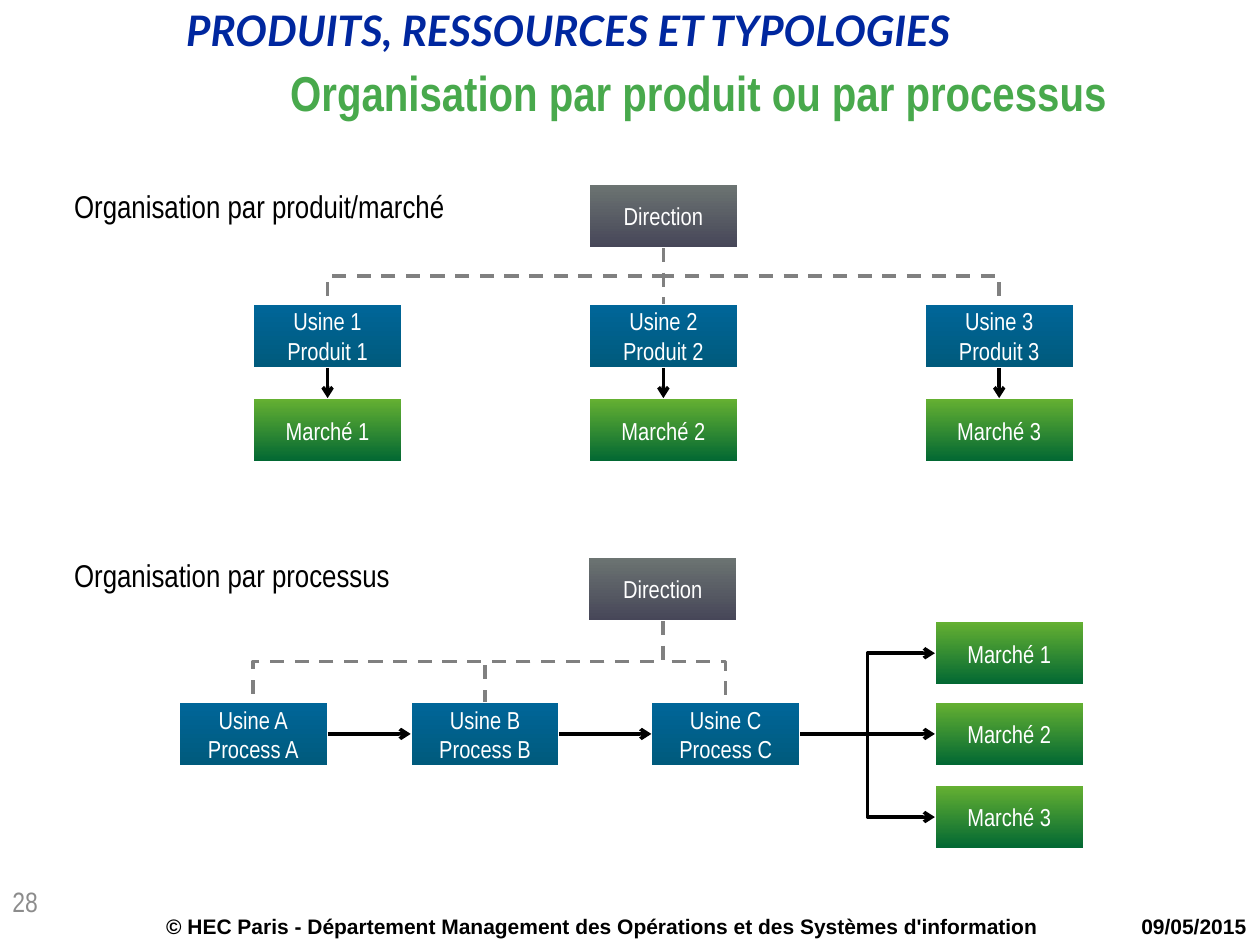
from lxml.etree import SubElement
from pptx import Presentation
from pptx.dml.color import RGBColor
from pptx.enum.dml import MSO_LINE
from pptx.enum.shapes import MSO_CONNECTOR, MSO_SHAPE
from pptx.enum.text import MSO_ANCHOR, MSO_AUTO_SIZE, PP_ALIGN
from pptx.oxml.ns import qn
from pptx.util import Inches, Pt

COLORS = {
    "navy": "00279F", "title": "48A94C", "black": "000000", "white": "FFFFFF",
    "dash": "808080", "number": "8C8C8C",
}
GRADIENTS = {
    "head": ("6C7472", "464658"),
    "plant": ("006699", "005A7C"),
    "market": ("66B132", "006633"),
}
COLS, ROWS = 100, 75
NODE_W, NODE_H = 11.8, 5.1

prs = Presentation()
prs.slide_width, prs.slide_height = Inches(10), Inches(7.5)


def rgb(name):
    return RGBColor.from_string(COLORS[name])


def grid(*values):
    unit = prs.slide_width / COLS
    return [round(v * unit) for v in values]


def format_text(tf, text, size, color, font="Arial Narrow", bold=False,
                italic=False, align=None, spacing=None):
    tf.text = text
    for p in tf.paragraphs:
        p.alignment = align
        p.line_spacing = spacing
        for r in p.runs:
            r.font.name, r.font.size = font, Pt(size)
            r.font.bold, r.font.italic = bold, italic
            r.font.color.rgb = rgb(color)


def add_text(s, box, text, size, color, wrap=False, **style):
    tf = s.shapes.add_textbox(*grid(*box)).text_frame
    tf.word_wrap = wrap
    format_text(tf, text, size, color, **style)


def add_node(s, x, y, text, kind):
    sp = s.shapes.add_shape(MSO_SHAPE.RECTANGLE, *grid(x, y, NODE_W, NODE_H))
    sp.shadow.inherit = False
    sp.fill.gradient()
    sp.fill.gradient_angle = 270
    for stop, color in zip(sp.fill.gradient_stops, GRADIENTS[kind]):
        stop.color.rgb = RGBColor.from_string(color)
    sp.line.color.rgb, sp.line.width = rgb("white"), Pt(1)
    tf = sp.text_frame
    tf.margin_left = tf.margin_right = tf.margin_top = tf.margin_bottom = 0
    tf.vertical_anchor = MSO_ANCHOR.MIDDLE
    tf.word_wrap = kind != "market"
    format_text(tf, text, 14, "white", align=PP_ALIGN.CENTER)
    return sp


def add_link(s, start, end, color):
    straight = start[0] == end[0] or start[1] == end[1]
    kind = MSO_CONNECTOR.STRAIGHT if straight else MSO_CONNECTOR.ELBOW
    c = s.shapes.add_connector(kind, *start, *end)
    c.line.color.rgb, c.line.width = rgb(color), Pt(2)
    SubElement(c.element.spPr, qn("a:effectLst"))
    return c


def add_arrow(s, start, end):
    c = add_link(s, start, end, "black")
    SubElement(c.line._get_or_add_ln(), qn("a:tailEnd"), type="arrow")


def add_branch(s, head, plant):
    (x1, y1), (x2, y2) = bottom(head), top(plant)
    if x1 == x2:
        c = add_link(s, (x1, y1), (x2, y2), "dash")
    else:
        cx, cy = (x1 + x2) // 2, (y1 + y2) // 2
        half_w, half_h = (y2 - y1) // 2, abs(x2 - x1) // 2
        c = add_link(s, (cx - half_w, cy - half_h), (cx + half_w, cy + half_h), "dash")
        xfrm = c.element.spPr.find(qn("a:xfrm"))
        xfrm.set("rot", str((90 if x2 < x1 else 270) * 60000))
        if x2 > x1:
            xfrm.set("flipH", "1")
    c.line.dash_style = MSO_LINE.DASH


def top(sp):
    return sp.left + sp.width // 2, sp.top


def bottom(sp):
    return sp.left + sp.width // 2, sp.top + sp.height


def left(sp):
    return sp.left, sp.top + sp.height // 2


def right(sp):
    return sp.left + sp.width, sp.top + sp.height // 2


def header(s, x, y, w, h):
    add_text(s, (x + 15, y + 0.3, 73, 4.6), "PRODUITS, RESSOURCES ET TYPOLOGIES",
             24, "navy", font="Lato", bold=True, italic=True, spacing=0.9)
    title = s.shapes.title
    title.left, title.top, title.width, title.height = grid(x, y + 2.9, w, h - 2.9)
    tf = title.text_frame
    tf.auto_size = MSO_AUTO_SIZE.NONE
    tf.vertical_anchor = MSO_ANCHOR.MIDDLE
    format_text(tf, "Organisation par produit ou par processus", 28, "title",
                bold=True, align=PP_ALIGN.RIGHT, spacing=0.9)


def product_chart(s, x, y, w, h):
    add_text(s, (x, y + 0.1, 31.7, 3.8), "Organisation par produit/marché",
             18, "black", spacing=0.9)
    first = x + 15.2
    step = (x + w - NODE_W - first) / 2
    head = add_node(s, first + step, y, "Direction", "head")
    for i in range(3):
        node_x = first + i * step
        plant = add_node(s, node_x, y + 9.5, f"Usine {i + 1}\nProduit {i + 1}", "plant")
        market = add_node(s, node_x, y + h - NODE_H, f"Marché {i + 1}", "market")
        add_branch(s, head, plant)
        add_arrow(s, bottom(plant), top(market))


def process_chart(s, x, y, w, h):
    add_text(s, (x, y - 0.2, 27.3, 3.8), "Organisation par processus",
             18, "black", spacing=0.9)
    head = add_node(s, x + 41.8, y, "Direction", "head")
    plants = [add_node(s, x + dx, y + 11.5, f"Usine {name}\nProcess {name}", "plant")
              for name, dx in zip("ABC", (9.3, 27.7, 46.8))]
    markets = [add_node(s, x + w - NODE_W, y + dy, f"Marché {i}", "market")
               for i, dy in enumerate((5.1, 11.5, h - NODE_H), 1)]
    for plant in plants:
        add_branch(s, head, plant)
    for plant, following in zip(plants, plants[1:]):
        add_arrow(s, right(plant), left(following))
    for market in markets:
        add_arrow(s, right(plants[-1]), left(market))


def footer(s, x, y, w, h):
    add_text(s, (x, y, 6.7, 4), "28", 16, "number", wrap=True)
    notices = (
        (x + 12.2, 73.2, True,
         "© HEC Paris - Département Management des Opérations et des Systèmes d'information"),
        (x + w - 10.4, 10.4, False, "09/05/2015"),
    )
    for left_col, width, wrap, text in notices:
        add_text(s, (left_col, y + h - 3, width, 3), text, 12, "black",
                 wrap=wrap, font="Arial", bold=True)


def main():
    s = prs.slides.add_slide(prs.slide_layouts[5])
    header(s, -1.2, 0, 90, 12.3)
    product_chart(s, 4.9, 14.6, 80.3, 22.1)
    process_chart(s, 4.9, 44.2, 81.1, 23.2)
    footer(s, 0, 69.7, COLS, ROWS - 69.7)
    prs.save("out.pptx")


if __name__ == "__main__":
    main()
